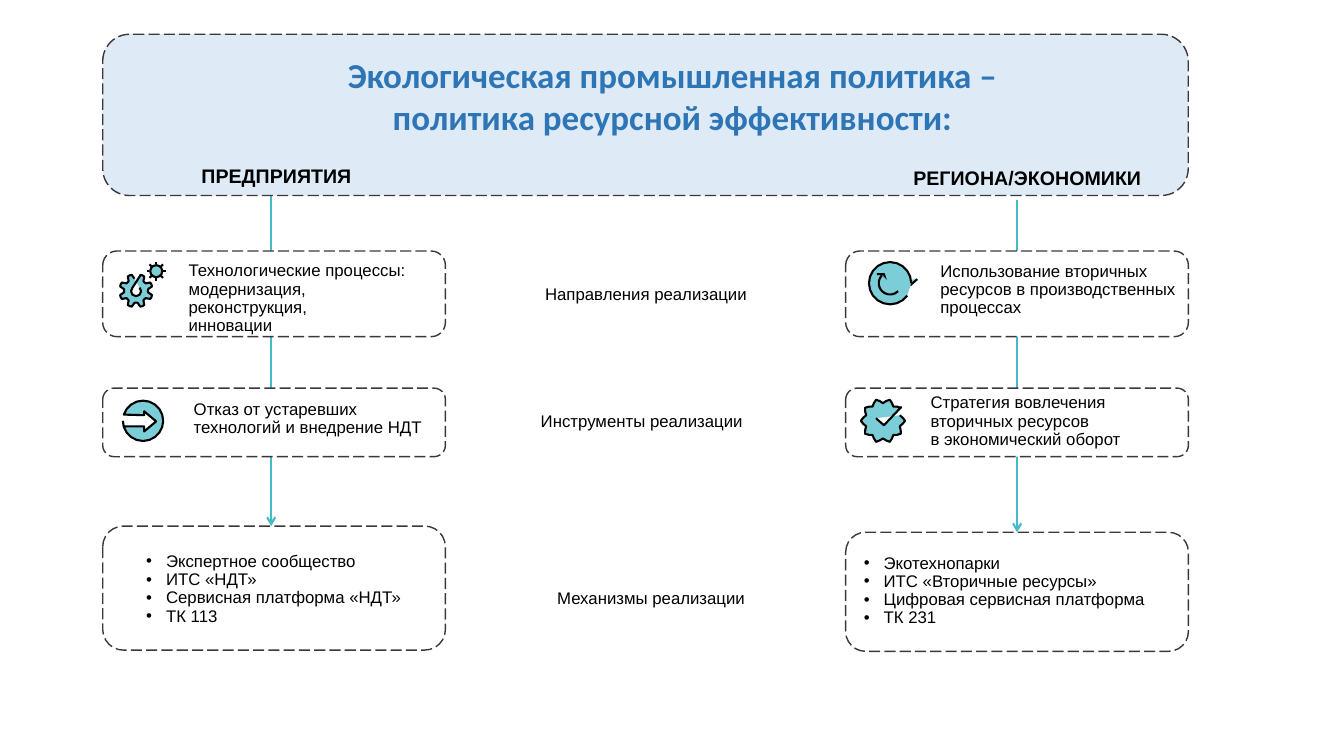
from copy import deepcopy
from math import cos, radians, sin

from lxml import etree
from pptx import Presentation
from pptx.dml.color import RGBColor
from pptx.enum.dml import MSO_LINE
from pptx.enum.shapes import MSO_CONNECTOR, MSO_SHAPE
from pptx.enum.text import MSO_ANCHOR, MSO_AUTO_SIZE, PP_ALIGN
from pptx.oxml.ns import qn
from pptx.util import Pt

STRAIGHT = MSO_CONNECTOR.STRAIGHT
ROUNDED, OVAL = MSO_SHAPE.ROUNDED_RECTANGLE, MSO_SHAPE.OVAL
LONG_DASH = MSO_LINE.LONG_DASH
TOP = MSO_ANCHOR.TOP
NO_AUTOFIT = MSO_AUTO_SIZE.NONE
LEFT, CENTER = PP_ALIGN.LEFT, PP_ALIGN.CENTER

BLACK = RGBColor(0x00, 0x00, 0x00)
WHITE = RGBColor(0xFF, 0xFF, 0xFF)
PALE_BLUE = RGBColor(0xDE, 0xEB, 0xF7)
TITLE_BLUE = RGBColor(0x2E, 0x75, 0xB6)
BORDER_GREY = RGBColor(0x3B, 0x38, 0x38)
ARROW_TEAL = RGBColor(0x46, 0xBA, 0xC6)
ICON_TEAL = RGBColor(0x7B, 0xCE, 0xD7)

BOX_WIDTH = 244.8


def write(shape, paragraphs, size=12, font="Arial", color=BLACK, bold=False,
          align=LEFT, spacing=1.0, wrap=True):
    """Fill the shape with paragraphs; a newline inside one is a line break."""
    frame = shape.text_frame
    frame.word_wrap = wrap
    frame.auto_size = NO_AUTOFIT
    frame.vertical_anchor = TOP
    for index, text in enumerate(paragraphs):
        paragraph = frame.add_paragraph() if index else frame.paragraphs[0]
        paragraph.text = text
        paragraph.alignment = align
        paragraph.line_spacing = spacing
        paragraph.space_before = Pt(0)
        for run in paragraph.runs:
            run.font.size = Pt(size)
            run.font.name = font
            run.font.bold = bold
            run.font.color.rgb = color
    run_format = next(shape.element.iter(qn("a:rPr")))
    for line_break in shape.element.iter(qn("a:br")):
        line_break.append(deepcopy(run_format))


def arc(center_x, center_y, radius, start, stop, step=18, teeth=0, depth=0, steepness=1):
    """Points along an arc in degrees, clockwise from the right, with optional teeth."""
    points = []
    count = round(abs(stop - start) / step)
    for index in range(count + 1):
        angle = radians(start + (stop - start) * index / count)
        wave = max(-1, min(1, steepness * cos(teeth * angle)))
        reach = radius + depth * wave
        points.append((center_x + reach * cos(angle), center_y + reach * sin(angle)))
    return points


presentation = Presentation()
presentation.slide_width, presentation.slide_height = Pt(960), Pt(540)
slide = presentation.slides.add_slide(presentation.slide_layouts[3])
shapes = slide.shapes
title, *lists = slide.placeholders

# Columns: left edge, arrow position and start, then top and height of the boxes
columns = [
    (73.4, 193.7, 139.7, [(179.3, 61.2), (277.2, 49), (375.8, 88.6)]),
    (604.1, 726.5, 142.6, [(179.3, 61.2), (277.2, 49), (380.2, 85)]),
]
connectors = []
bordered = []
for left, arrow_x, arrow_top, boxes in columns:
    arrow = shapes.add_connector(STRAIGHT, Pt(arrow_x), Pt(arrow_top),
                                 Pt(arrow_x), Pt(boxes[2][0]))
    arrow.line.color.rgb = ARROW_TEAL
    connectors.append(arrow)
    for top, height in boxes:
        box = shapes.add_shape(ROUNDED, Pt(left), Pt(top), Pt(BOX_WIDTH), Pt(height))
        box.fill.solid()
        box.fill.fore_color.rgb = WHITE
        bordered.append(box)
    box.fill.background()
    if abs(left + BOX_WIDTH / 2 - arrow_x) < 1:
        arrow.end_connect(box, 0)
    etree.SubElement(arrow.element.spPr.find(qn("a:ln")), qn("a:tailEnd"), type="arrow")

panel = shapes.add_shape(ROUNDED, Pt(73.4), Pt(24.5), Pt(775.4), Pt(115.2))
panel.fill.solid()
panel.fill.fore_color.rgb = PALE_BLUE
for box in bordered + [panel]:
    box.shadow.inherit = False
    box.line.color.rgb = BORDER_GREY
    box.line.width = Pt(1)
    box.line.dash_style = LONG_DASH

# Title in front of the panel
title.left, title.top, title.width, title.height = Pt(91.4), Pt(34.7), Pt(735.1), Pt(85)
title.fill.solid()
title.fill.fore_color.rgb = PALE_BLUE
title.text_frame.margin_left = Pt(49.7)
write(title, ["Экологическая промышленная политика –", "политика ресурсной эффективности:"],
      size=25, font="Calibri", color=TITLE_BLUE, bold=True, align=CENTER)
title.element.getparent().append(title.element)

# Lists of mechanisms
mechanisms = [
    ((97.2, 391.5, 212.4, 59.8),
     ["Экспертное сообщество", "ИТС «НДТ»", "Сервисная платформа «НДТ»", "ТК 113"]),
    ((609.8, 392.8, 252.7, 59.8),
     ["Экотехнопарки", "ИТС «Вторичные ресурсы»", "Цифровая сервисная платформа", "ТК 231"]),
]
for body, (area, items) in zip(lists, mechanisms):
    body.left, body.top, body.width, body.height = map(Pt, area)
    write(body, items, spacing=0.9)
    for properties in body.element.iter(qn("a:pPr")):
        properties.set("marL", str(Pt(14.2)))
        properties.set("indent", str(-Pt(14.2)))

# Labels
heading = dict(size=14, bold=True, wrap=False)
detail = dict(spacing=0.9)
stage = dict(align=CENTER)
labels = [
    ((136.8, 113.8, 123.1, 24.5), "ПРЕДПРИЯТИЯ", heading),
    ((645.3, 115.2, 178.6, 24.5), "РЕГИОНА/ЭКОНОМИКИ", heading),
    ((127.6, 183.9, 180.7, 59.8),
     "Технологические процессы:\nмодернизация, реконструкция,\nинновации", detail),
    ((664.6, 184.3, 193.7, 46.8),
     "Использование вторичных\nресурсов в производственных\nпроцессах", detail),
    ((131.3, 283, 179.3, 33.1),
     "Отказ от устаревших\nтехнологий и внедрение НДТ", dict(spacing=0.9, wrap=False)),
    ((657.6, 278.2, 200.9, 46.8),
     "Стратегия вовлечения\nвторичных ресурсов\nв экономический оборот", detail),
    ((369, 199.2, 185, 21.6), "Направления реализации", stage),
    ((360.5, 289.8, 195.8, 21.6), "Инструменты реализации", stage),
    ((374.4, 416.2, 181.4, 21.6), "Механизмы реализации", stage),
]
for area, text, text_format in labels:
    write(shapes.add_textbox(*map(Pt, area)), [text], **text_format)

# Icons
arrow_disc = [(87.8, 304.6), (103, 304.6), (103, 308.2), (111.6, 301), (103, 293.8),
              (103, 296.6)] + arc(102.2, 300.6, 14.4, 198, 540)
check_badge = [(625.7, 298.8), (631.4, 303.8), (643.7, 290.9)] + arc(
    630.7, 300.6, 14.2, -36, -378, step=9, teeth=10, depth=1.6)
drop_gear = arc(97.2, 208, 3.6, -45, 225, step=45) + [(97.2, 201.6), (100.1, 197)] + arc(
    97.2, 207.7, 10.2, -75, 262.5, step=7.5, teeth=8, depth=-1.7, steepness=1.8)
recycling = [
    [(645.1, 200.2), (650.2, 203.8), (655.2, 199.4)],
    arc(635.8, 202.3, 15.1, 0, -324),
    [(632.9, 200.9), (631.4, 195.8), (626.4, 195.8)],
    arc(635.8, 202.3, 8.1, 225, 45),
]
icon_parts = []
for outline in [arrow_disc, check_badge, drop_gear, *recycling]:
    points = [(Pt(x), Pt(y)) for x, y in outline]
    builder = shapes.build_freeform(*points[0])
    builder.add_line_segments(points[1:], close=False)
    icon_parts.append(builder.convert_to_shape())

sun_x, sun_y, sun_radius = 111.6, 193.7, 4.3
icon_parts.append(shapes.add_shape(OVAL, Pt(sun_x - sun_radius), Pt(sun_y - sun_radius),
                                   Pt(2 * sun_radius), Pt(2 * sun_radius)))
for part in icon_parts:
    part.shadow.inherit = False
    part.fill.solid()
    part.fill.fore_color.rgb = ICON_TEAL
    part.line.color.rgb = BLACK
    part.line.width = Pt(1.5)

for degrees in range(0, 360, 45):
    across, down = cos(radians(degrees)), sin(radians(degrees))
    ray = shapes.add_connector(STRAIGHT, Pt(sun_x + 4.8 * across), Pt(sun_y + 4.8 * down),
                               Pt(sun_x + 6.8 * across), Pt(sun_y + 6.8 * down))
    ray.line.color.rgb = BLACK
    connectors.append(ray)

for connector in connectors:
    connector.line.width = Pt(1.5)
    etree.SubElement(connector.element.spPr, qn("a:effectLst"))

presentation.save("out.pptx")
